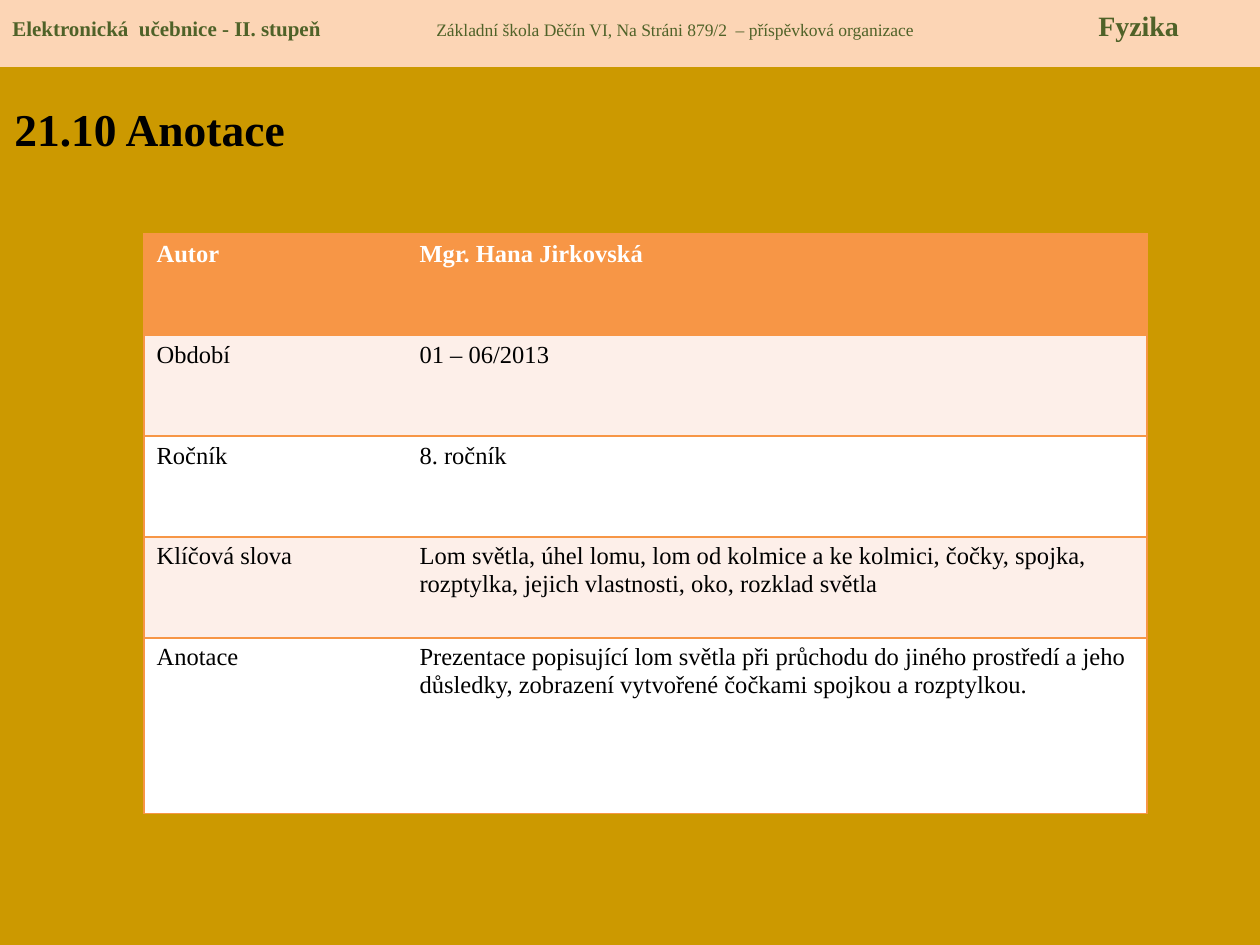
from lxml import etree
from pptx import Presentation
from pptx import util as u
from pptx.dml.color import RGBColor
from pptx.enum import shapes, text
from pptx.oxml.ns import qn

EMU_PER_PX = 914400 // 126
FONT = "Times New Roman"
GOLD = RGBColor(0xCC, 0x99, 0x00)
PEACH = RGBColor(0xFC, 0xD5, 0xB5)
GREEN = RGBColor(0x4F, 0x62, 0x28)
ORANGE = RGBColor(0xF7, 0x96, 0x46)
BLUSH = RGBColor(0xFD, 0xEF, 0xE9)
WHITE = RGBColor(0xFF, 0xFF, 0xFF)
BLACK = RGBColor(0x00, 0x00, 0x00)

HEADER = [
    ("Elektronická  učebnice - II. stupeň", 12, True),
    ("Základní škola Děčín VI, Na Stráni 879/2  – příspěvková organizace", 10, False),
    ("Fyzika", 16, True),
]
ANNOTATION = [
    ("Autor", "Mgr. Hana Jirkovská"),
    ("Období", "01 – 06/2013"),
    ("Ročník", "8. ročník"),
    ("Klíčová slova", "Lom světla, úhel lomu, lom od kolmice a ke kolmici, čočky, spojka, "
                      "rozptylka, jejich vlastnosti, oko, rozklad světla"),
    ("Anotace", "Prezentace popisující lom světla při průchodu do jiného prostředí a jeho "
                "důsledky, zobrazení vytvořené čočkami spojkou a rozptylkou."),
]


def px(length):
    return u.Emu(length * EMU_PER_PX)


class SlideBuilder:
    """Draws styled elements on the current slide."""

    def __init__(self, slide, font_name):
        self.slide = slide
        self.font_name = font_name

    def background(self, color):
        fill = self.slide.background.fill
        fill.solid()
        fill.fore_color.rgb = color

    def style(self, font, color, size=None, bold=None):
        font.name = self.font_name
        font.color.rgb = color
        if size:
            font.size = u.Pt(size)
        font.bold = bold

    def header(self, box, parts, tab_stops):
        shape = self.slide.shapes.add_shape(shapes.MSO_SHAPE.RECTANGLE, *map(px, box))
        shape.shadow.inherit = False
        shape.fill.solid()
        shape.fill.fore_color.rgb = PEACH
        shape.line.fill.background()
        frame = shape.text_frame
        frame.vertical_anchor = text.MSO_ANCHOR.TOP
        frame.margin_top = px(9)
        paragraph = frame.paragraphs[0]
        paragraph.alignment = text.PP_ALIGN.LEFT
        self.style(paragraph.font, GREEN)
        for index, (words, size, bold) in enumerate(parts):
            run = paragraph.add_run()
            run.text = "\t" + words if index else words
            self.style(run.font, GREEN, size, bold)
        tab_list = etree.Element(qn("a:tabLst"))
        for stop in tab_stops:
            etree.SubElement(tab_list, qn("a:tab"), pos=str(px(stop)), algn="l")
        paragraph.font._element.addprevious(tab_list)

    def title(self, box, words):
        shape = self.slide.shapes.add_textbox(*map(px, box))
        shape.text_frame.word_wrap = True
        paragraph = shape.text_frame.paragraphs[0]
        paragraph.text = words
        self.style(paragraph.font, BLACK, 26, True)

    def border(self, cell, side, color):
        line = etree.SubElement(cell._tc.get_or_add_tcPr(), qn("a:ln" + side), w=str(u.Pt(1)))
        if color is None:
            etree.SubElement(line, qn("a:noFill"))
        else:
            fill = etree.SubElement(line, qn("a:solidFill"))
            etree.SubElement(fill, qn("a:srgbClr"), val=str(color))

    def table(self, left, top, widths, heights, rows):
        table = self.slide.shapes.add_table(
            len(rows), len(widths), px(left), px(top), px(sum(widths)), px(sum(heights))).table
        for column, width in zip(table.columns, widths):
            column.width = px(width)
        for row_index, (row, height) in enumerate(zip(rows, heights)):
            table.rows[row_index].height = px(height)
            is_head = row_index == 0
            color = ORANGE if is_head else BLUSH if row_index % 2 else WHITE
            for column_index, words in enumerate(row):
                cell = table.cell(row_index, column_index)
                is_first = column_index == 0
                is_last = column_index == len(widths) - 1
                self.border(cell, "L", ORANGE if is_first else None)
                self.border(cell, "R", ORANGE if is_last else None)
                self.border(cell, "T", ORANGE)
                self.border(cell, "B", ORANGE)
                cell.fill.solid()
                cell.fill.fore_color.rgb = color
                paragraph = cell.text_frame.paragraphs[0]
                paragraph.text = words
                self.style(paragraph.font, WHITE if is_head else BLACK, 14, is_head)


def main():
    presentation = Presentation()
    presentation.slide_width, presentation.slide_height = px(1260), px(945)
    slide = presentation.slides.add_slide(presentation.slide_layouts[6])
    builder = SlideBuilder(slide, FONT)
    builder.background(GOLD)
    builder.header((0, 0, 1260, 67), HEADER, (424, 1086))
    builder.title((2, 95, 528, 107), "21.10 Anotace")
    builder.table(144, 234, (263, 740), (101, 101, 101, 101, 176), ANNOTATION)
    presentation.save("out.pptx")


if __name__ == "__main__":
    main()
